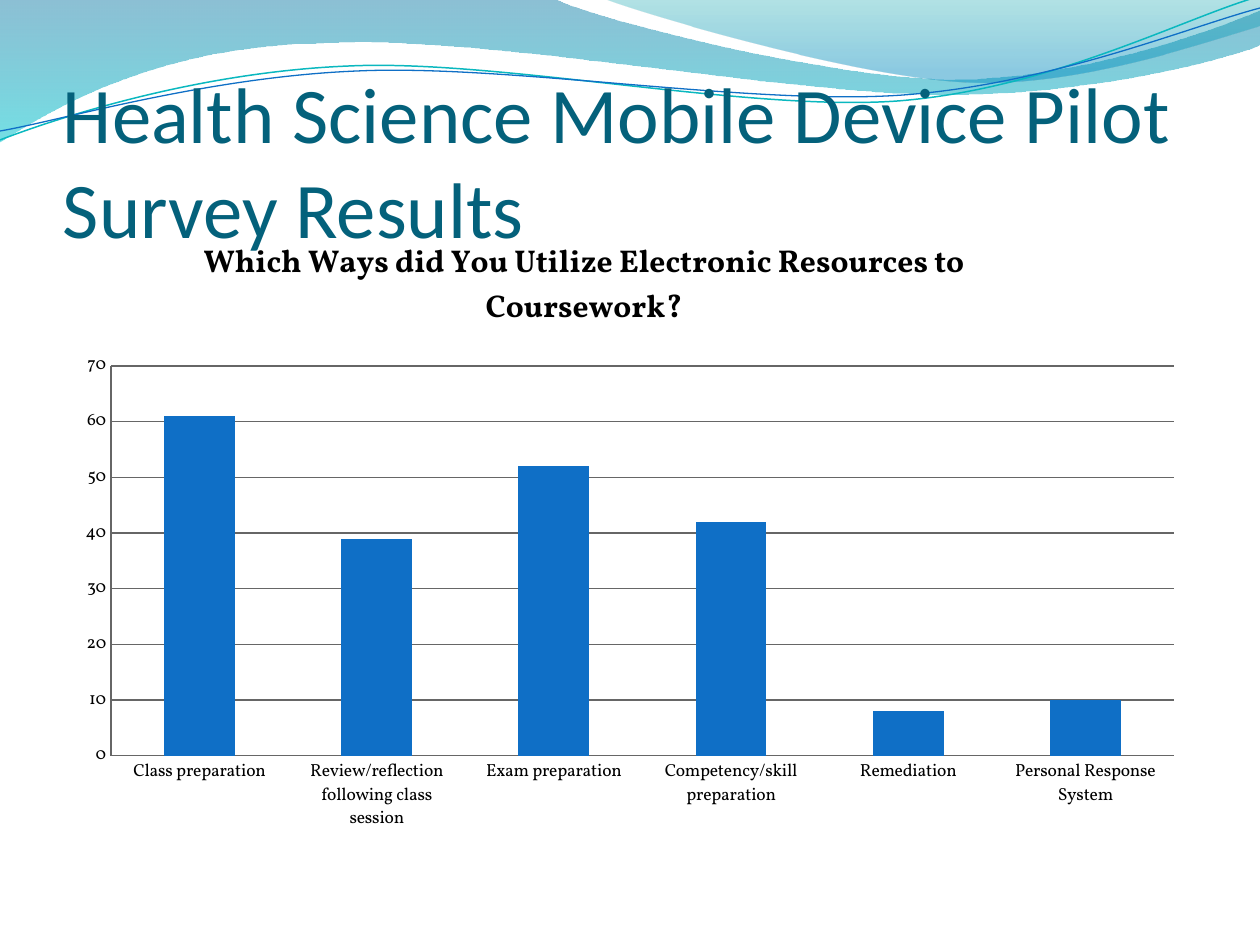
"""Build the survey results slide with its wave header and column chart."""
from math import cos, radians, sin

from pptx import Presentation
from pptx.chart.data import CategoryChartData as Data
from pptx.dml.color import RGBColor as Rgb
from pptx.enum.chart import XL_CHART_TYPE as Kind, XL_TICK_MARK as Tick
from pptx.enum.text import MSO_ANCHOR as Anchor
from pptx.oxml import parse_xml
from pptx.oxml.ns import nsdecls, qn
from pptx.util import Emu, Pt

SCALE = 914400 / 126
TILT = -2.7
COLORS = {"title": "04617B", "bar": "0F6FC6", "teal": "0AB8BF",
          "text": "000000", "grid": "666666"}
TITLE = "Health Science Mobile Device Pilot Survey Results"
TITLE_BOX = (63, 97, 1134, 157)
ASK = "Which Ways did You Utilize Electronic Resources to Coursework?"
ASK_AT = (198, 233)
CHART_BOX = (63, 220, 1134, 624)
PLOT_BOX = (111, 366, 1063, 390)
RATES = {
    "Class preparation": 61,
    "Review/reflection following class session": 39,
    "Exam preparation": 52,
    "Competency/skill preparation": 42,
    "Remediation": 8,
    "Personal Response System": 10,
}
BANDS = [
    ((-1, -1, 1262, 143),
     [(0, 0), (554, -1),
      (600, 21, 837, 79, 955, 79), (1075, 79, 1207, 33, 1260, 11),
      (1261, 45), (1239, 55, 1096, 96, 940, 94),
      (784, 94, 481, 35, 324, 43), (163, 45, 58, 105, -1, 142), (0, 0)],
     [(0, "0074A1", 45), (100, "00C6CF", 55)]),
    ((604, -1, 656, 88),
     [(604, -1), (641, 14, 859, 78, 969, 82),
      (1079, 87, 1211, 40, 1260, 26), (1260, 0), (604, -1)],
     [(0, "00A1A9", 30), (80, "008BBF", 45)]),
]
WAVES = [
    ((-2, 28, 1262, 89),
     [(0, 140), (60, 117, 199, 72, 349, 66),
      (498, 59, 747, 112, 898, 101), (1050, 89, 1182, 19, 1257, -3)],
     "teal", 0.85),
    ((-2, 38, 1263, 73),
     [(0, 131), (59, 121, 207, 77, 357, 71),
      (508, 64, 752, 106, 903, 95), (1053, 84, 1191, 26, 1260, 8)],
     "bar", 0.75),
]


def px(n):
    return Emu(round(n * SCALE))


def tint(name):
    return Rgb.from_string(COLORS[name])


def local(x, y, box, turn):
    left, top, wide, high = box
    dx, dy = x - left - wide / 2, y - top - high / 2
    c, s = cos(radians(turn)), sin(radians(turn))
    return px(wide / 2 + dx * c + dy * s), px(high / 2 - dx * s + dy * c)


def draw(slide, box, route, close, turn=0):
    ends = [(px(part[-2]), px(part[-1])) for part in route]
    pen = slide.shapes.build_freeform(*ends[0])
    pen.add_line_segments(ends[1:], close=close)
    shape = pen.convert_to_shape()
    shape.left, shape.top, shape.width, shape.height = map(px, box)
    shape.rotation = turn
    shape.shadow.inherit = False
    shape.fill.background()
    body = ""
    for i, part in enumerate(route):
        tag = "moveTo" if i == 0 else "lnTo"
        tag = "cubicBezTo" if len(part) == 6 else tag
        dots = [local(x, y, box, turn) for x, y in zip(part[::2], part[1::2])]
        marks = "".join(f'<a:pt x="{x}" y="{y}"/>' for x, y in dots)
        body += f"<a:{tag}>{marks}</a:{tag}>"
    body += "<a:close/>" if close else ""
    track = next(shape._element.iter(qn("a:path")))
    track.getparent().replace(track, parse_xml(
        f'<a:path {nsdecls("a")} w="{px(box[2])}" h="{px(box[3])}">'
        f'{body}</a:path>'))
    return shape


def add_band(slide, box, route, stops):
    shape = draw(slide, box, route, True)
    shape.line.fill.background()
    marks = "".join(
        f'<a:gs pos="{pos * 1000}"><a:srgbClr val="{color}">'
        f'<a:alpha val="{alpha * 1000}"/></a:srgbClr></a:gs>'
        for pos, color, alpha in stops)
    grad = parse_xml(f'<a:gradFill {nsdecls("a")} rotWithShape="1">'
                     f'<a:gsLst>{marks}</a:gsLst>'
                     '<a:lin ang="5400000" scaled="0"/></a:gradFill>')
    props = shape._element.spPr
    props.replace(props.find(qn("a:noFill")), grad)


def add_wave(slide, box, route, color, width):
    line = draw(slide, box, route, False, TILT).line
    line.color.rgb = tint(color)
    line.width = Pt(width)


def write(frame, text, *, size, font, color, bold=False):
    run = frame.paragraphs[0].add_run()
    run.text = text
    run.font.size, run.font.name, run.font.bold = Pt(size), font, bold
    run.font.color.rgb = tint(color)


def add_title(slide):
    frame = slide.shapes.add_textbox(*map(px, TITLE_BOX)).text_frame
    frame.word_wrap = True
    frame.vertical_anchor = Anchor.BOTTOM
    frame.margin_left = frame.margin_right = frame.margin_bottom = 0
    frame.margin_top = px(6)
    write(frame, TITLE, size=45, font="Calibri", color="title")


def place(host, index, box, inner=False):
    for old in host.findall(qn("c:layout")):
        host.remove(old)
    left, top, wide, high = CHART_BOX
    parts = [(box[0] - left) / wide, (box[1] - top) / high]
    parts += [n / full for n, full in zip(box[2:], (wide, high))]
    body = '<c:layoutTarget val="inner"/>' if inner else ""
    body += '<c:xMode val="edge"/><c:yMode val="edge"/>'
    body += "".join(f'<c:{key} val="{part:.4f}"/>'
                    for key, part in zip("xywh", parts))
    host.insert(index, parse_xml(
        f'<c:layout {nsdecls("c")}><c:manualLayout>{body}'
        '</c:manualLayout></c:layout>'))


def add_chart(slide):
    data = Data()
    data.categories = list(RATES)
    data.add_series("Series 1", list(RATES.values()))
    chart = slide.shapes.add_chart(
        Kind.COLUMN_CLUSTERED, *map(px, CHART_BOX), data).chart
    chart.has_legend = False
    chart.font.size, chart.font.name = Pt(10), "Vollkorn"
    chart.font.color.rgb = tint("text")
    chart.has_title = True
    head = chart.chart_title
    write(head.text_frame, ASK, size=18, font="Vollkorn", color="text",
          bold=True)
    place(head._element, 1, ASK_AT)
    place(chart._chartSpace.chart.plotArea, 0, PLOT_BOX, inner=True)
    plot = chart.plots[0]
    plot.gap_width = 150
    plot.vary_by_categories = False
    fill = plot.series[0].format.fill
    fill.solid()
    fill.fore_color.rgb = tint("bar")
    scale = chart.value_axis
    scale.minimum_scale, scale.maximum_scale, scale.major_unit = 0, 70, 10
    scale.has_major_gridlines = True
    for axis in (chart.category_axis, scale):
        axis.major_tick_mark = axis.minor_tick_mark = Tick.NONE
    for part in (chart.category_axis, scale, scale.major_gridlines):
        part.format.line.color.rgb = tint("grid")
        part.format.line.width = Pt(0.75)


def main():
    deck = Presentation()
    deck.slide_width, deck.slide_height = px(1260), px(945)
    slide = deck.slides.add_slide(deck.slide_layouts[6])
    for band in BANDS:
        add_band(slide, *band)
    for wave in WAVES:
        add_wave(slide, *wave)
    add_title(slide)
    add_chart(slide)
    deck.save("out.pptx")


if __name__ == "__main__":
    main()
